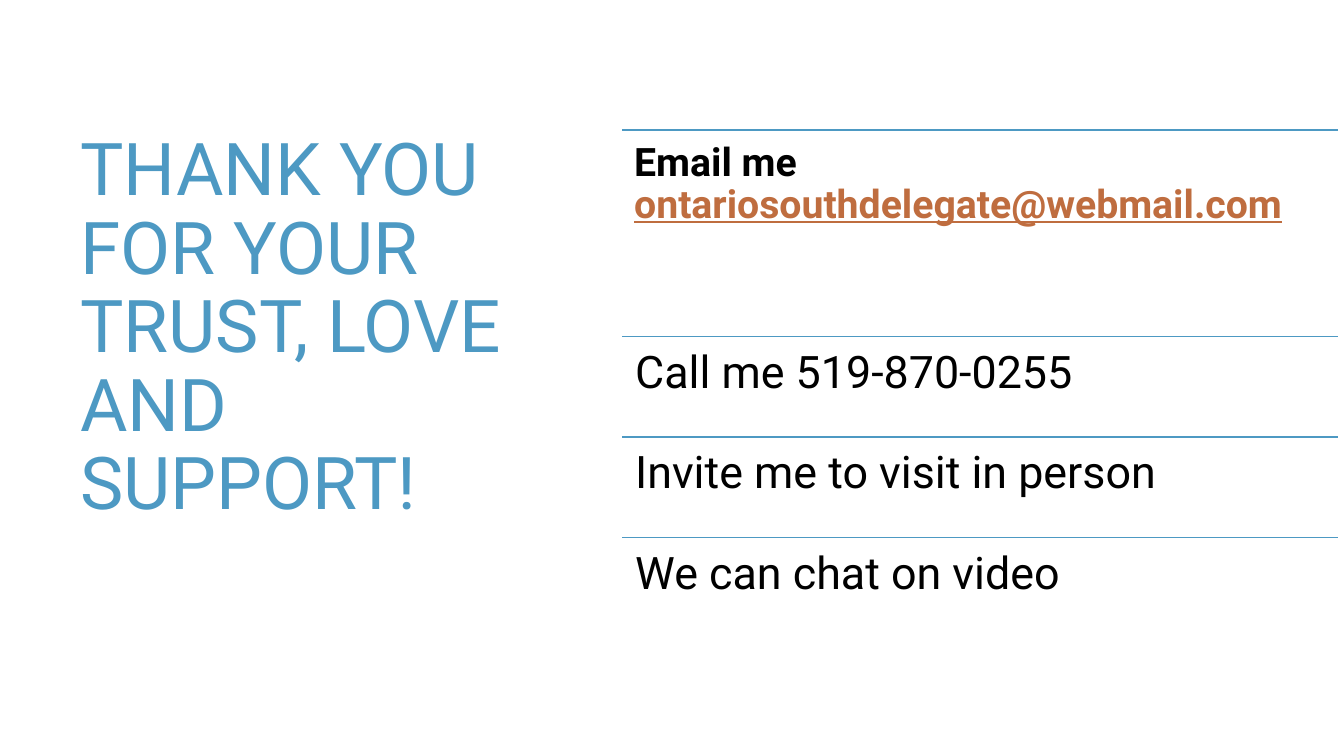
from lxml import etree
from pptx import Presentation
from pptx.dml.color import RGBColor
from pptx.enum.shapes import MSO_CONNECTOR
from pptx.enum.text import MSO_ANCHOR
from pptx.oxml.ns import qn
from pptx.util import Inches, Pt

STRAIGHT = MSO_CONNECTOR.STRAIGHT
TOP, MIDDLE = MSO_ANCHOR.TOP, MSO_ANCHOR.MIDDLE
BLUE = RGBColor(0x4D, 0x99, 0xC3)
RUST = RGBColor(0xBF, 0x6D, 0x3F)
BLACK = RGBColor(0, 0, 0)


class Page:
    def __init__(self, slide, font):
        self.shapes = slide.shapes
        self.font = font

    def text(self, left, top, width, height, runs, size, inset=0.1, anchor=TOP, bold=False):
        box = self.shapes.add_textbox(Inches(left), Inches(top), Inches(width), Inches(height))
        frame = box.text_frame
        frame.word_wrap = True
        frame.vertical_anchor = anchor
        frame.margin_left = frame.margin_right = Inches(inset)
        frame.margin_top = frame.margin_bottom = Inches(inset)
        para = frame.paragraphs[0]
        para.line_spacing = 0.9
        for words, color, under in runs:
            run = para.add_run()
            run.text = words
            run.font.name = self.font
            run.font.size = Pt(size)
            run.font.bold = bold
            run.font.underline = under
            run.font.color.rgb = color

    def rule(self, left, top, width):
        line = self.shapes.add_connector(
            STRAIGHT, Inches(left), Inches(top), Inches(left + width), Inches(top))
        line.line.color.rgb = BLUE
        line.line.width = Pt(1)
        etree.SubElement(line._element.spPr, qn("a:effectLst"))


def main():
    deck = Presentation()
    deck.slide_width, deck.slide_height = Inches(13.33), Inches(7.5)
    page = Page(deck.slides.add_slide(deck.slide_layouts[6]), "Roboto")

    title = "THANK YOU FOR YOUR TRUST, LOVE AND SUPPORT!"
    page.text(0.7, 0.75, 4.68, 5.03, [(title, BLUE, False)], 52, anchor=MIDDLE)

    left, width = 6.17, 7.1
    email = [("Email me ", BLACK, False), ("ontariosouthdelegate@webmail.com", RUST, True)]
    page.rule(left, 1.29, width)
    page.text(left, 1.29, width, 2.05, email, 28, inset=0.12, bold=True)

    offers = ["Call me 519-870-0255", "Invite me to visit in person", "We can chat on video"]
    for row, offer in enumerate(offers):
        top = 3.34 + row * 0.995
        page.rule(left, top, width)
        page.text(left, top, width, 0.99, [(offer, BLACK, False)], 32, inset=0.13)

    deck.save("out.pptx")


if __name__ == "__main__":
    main()
